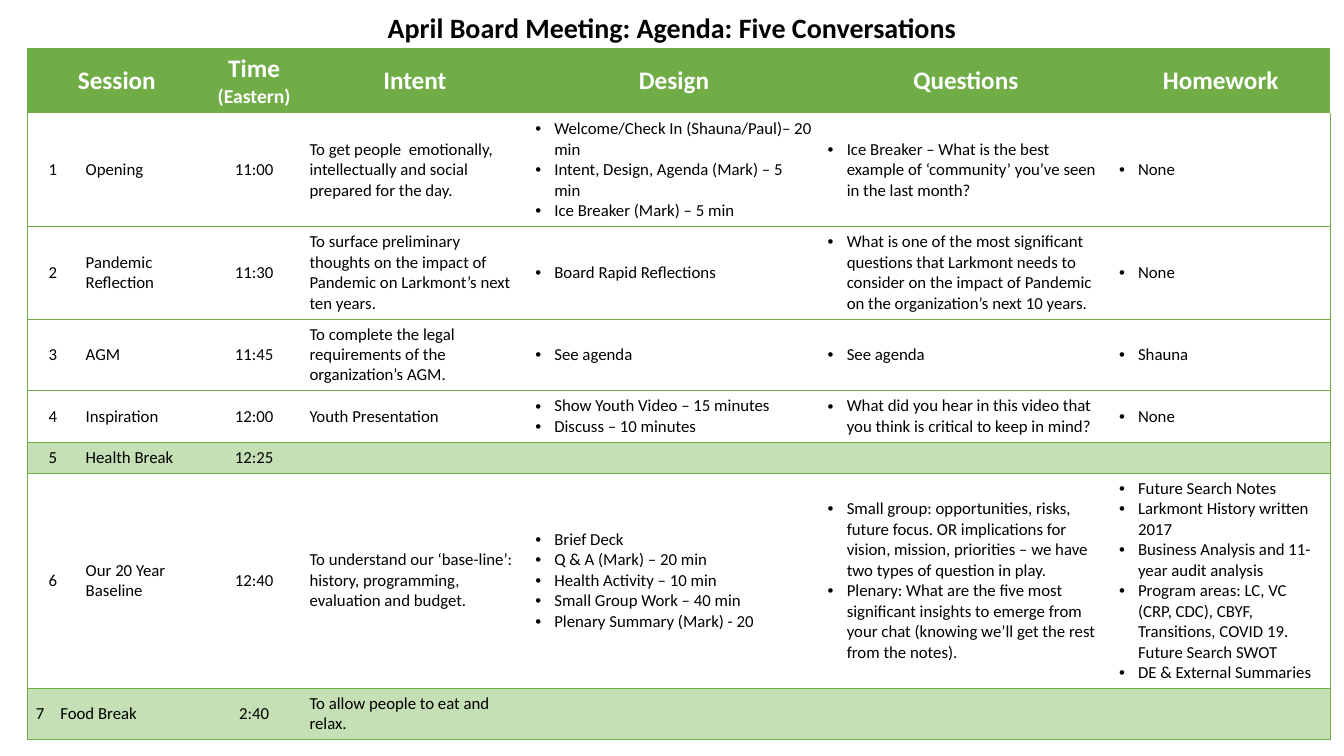
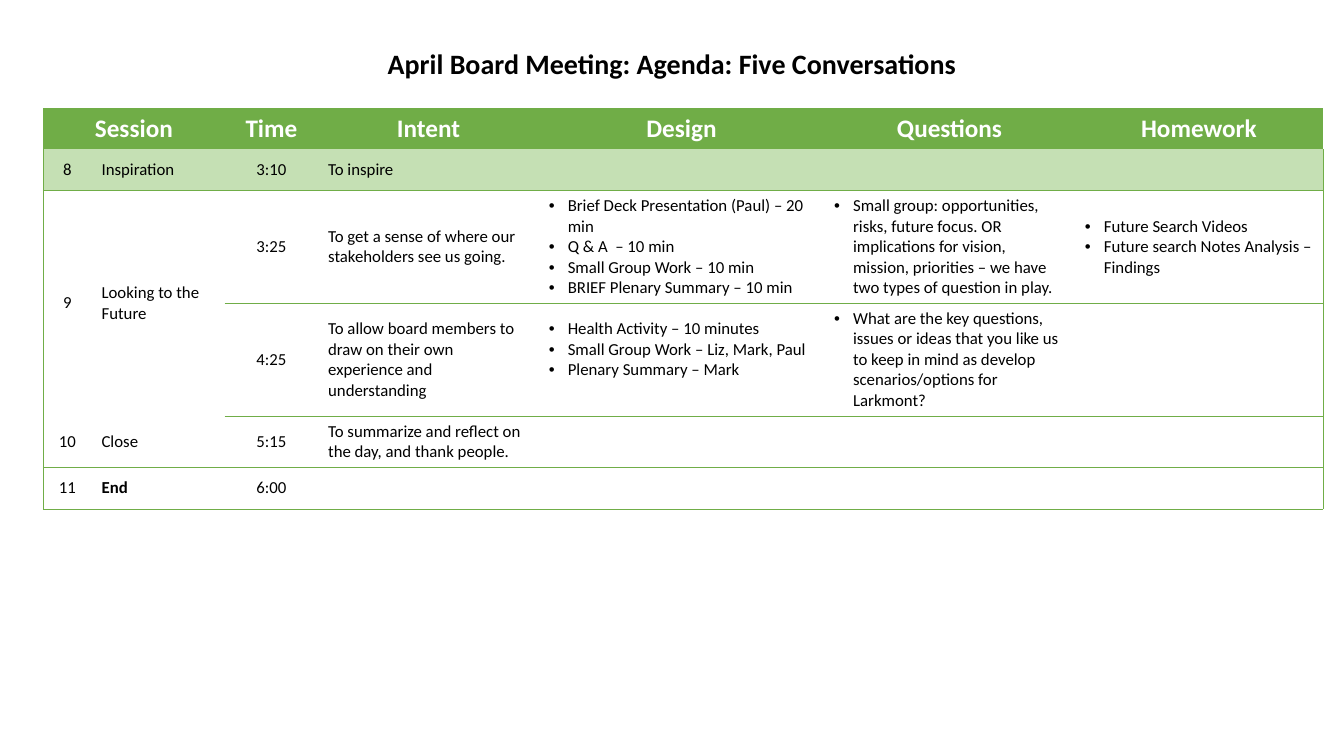
from dataclasses import dataclass

from lxml import etree
from pptx import Presentation
from pptx import util as u
from pptx.dml.color import RGBColor
from pptx.enum import text
from pptx.oxml.ns import qn

FONT = "Calibri"
BLACK, WHITE, GREEN, PALE_GREEN = "000000", "FFFFFF", "70AD47", "C5E0B4"
TITLE = "April Board Meeting: Agenda: Five Conversations"
PLAIN_TABLE_STYLE = "{2D5ABB26-0587-4C30-8999-92F81FD0307C}"
TITLE_ONLY = 5
CENTERED_FIELDS = (0, 2)
FIRST_BULLET_FIELD = 4
BULLET_INDENT = u.Cm(0.48)
CELL_PADDING = u.Cm(0.13)

Lines = tuple[str, ...]


@dataclass(frozen=True)
class Session:
    number: str
    name: str
    time: str
    intent: str = ""
    design: Lines = ()
    questions: Lines = ()
    homework: Lines = ()
    height: float = 1.04
    shaded: bool = False
    bold_name: bool = False
    continues: bool = False  # shares number and name with the row above
    design_lift: float = 0
    starts: Lines | tuple[int, ...] = ()  # overrides the agenda's field columns

    def fields(self) -> list[Lines]:
        words = [(value,) if value else () for value in
                 (self.number, self.name, self.time, self.intent)]
        return words + [self.design, self.questions, self.homework]


@dataclass(frozen=True)
class Agenda:
    title_top: float
    left: float
    top: float
    padding: float
    widths: tuple[float, ...]
    starts: tuple[int, ...]  # grid column where each field begins
    time_heading: Lines
    heading_height: float
    sessions: tuple[Session, ...]

    def headings(self) -> list[Lines]:
        return [("Session",), (), self.time_heading, ("Intent",), ("Design",),
                ("Questions",), ("Homework",)]


AGENDAS = (
    Agenda(
        0, 0.69, 1.22, 0.19,
        (0.64, 0.64, 3.23, 2.41, 5.69, 7.37, 6.45, 0.89, 5.51),
        (0, 2, 3, 4, 5, 6, 8), ("Time", "(Eastern)"), 1.64,
        (
            Session("1", "Opening", "11:00",
                    "To get people  emotionally, intellectually and social prepared for the day.",
                    ("Welcome/Check In (Shauna/Paul)– 20 min",
                     "Intent, Design, Agenda (Mark) – 5 min",
                     "Ice Breaker (Mark) – 5 min"),
                    ("Ice Breaker – What is the best example of ‘community’ you’ve seen "
                     "in the last month?",),
                    ("None",), 2.85),
            Session("2", "Pandemic Reflection", "11:30",
                    "To surface preliminary thoughts on the impact of Pandemic on "
                    "Larkmont’s next ten years.",
                    ("Board Rapid Reflections",),
                    ("What is one of the most significant questions that Larkmont needs to "
                     "consider on the impact of Pandemic on the organization’s next 10 years.",),
                    ("None",), 2.32),
            Session("3", "AGM", "11:45",
                    "To complete the legal requirements of the organization’s AGM.",
                    ("See agenda",), ("See agenda",), ("Shauna",), 1.8),
            Session("4", "Inspiration", "12:00", "Youth Presentation",
                    ("Show Youth Video – 15 minutes", "Discuss – 10 minutes"),
                    ("What did you hear in this video that you think is critical "
                     "to keep in mind?",),
                    ("None",), 1.3),
            Session("5", "Health Break", "12:25", height=0.77, shaded=True),
            Session("6", "Our 20 Year Baseline", "12:40",
                    "To understand our ‘base-line’: history, programming, evaluation and budget.",
                    ("Brief Deck", "Q & A (Mark) – 20 min", "Health Activity – 10 min",
                     "Small Group Work – 40 min", "Plenary Summary (Mark) - 20"),
                    ("Small group: opportunities, risks, future focus. OR implications for "
                     "vision, mission, priorities – we have two types of question in play.",
                     "Plenary: What are the five most significant insights to emerge from "
                     "your chat (knowing we’ll get the rest from the notes)."),
                    ("Future Search Notes", "Larkmont History written 2017",
                     "Business Analysis and 11-year audit analysis",
                     "Program areas: LC, VC (CRP, CDC), CBYF, Transitions, COVID 19. "
                     "Future Search SWOT",
                     "DE & External Summaries"), 5.42),
            Session("7", "Food Break", "2:40", "To allow people to eat and relax.",
                    height=1.3, shaded=True, starts=(0, 1, 3, 4, 5, 6, 7)),
        ),
    ),
    Agenda(
        0.91, 1.09, 2.72, 0.25,
        (1.22, 3.35, 2.36, 5.56, 7.19, 6.32, 6.25),
        (0, 1, 2, 3, 4, 5, 6), ("Time",), 1.04,
        (
            Session("8", "Inspiration", "3:10", "To inspire", shaded=True),
            Session("9", "Looking to the Future", "3:25",
                    "To get a sense of where our stakeholders see us going.",
                    ("Brief Deck Presentation (Paul) – 20 min", "Q & A  – 10 min",
                     "Small Group Work – 10 min", "BRIEF Plenary Summary – 10 min"),
                    ("Small group: opportunities, risks, future focus. OR implications for "
                     "vision, mission, priorities – we have two types of question in play.",),
                    ("Future Search Videos", "Future search Notes Analysis – Findings"), 2.84),
            Session("", "", "4:25",
                    "To allow board members to draw on their own experience and understanding",
                    ("Health Activity – 10 minutes", "Small Group Work – Liz, Mark, Paul",
                     "Plenary Summary – Mark"),
                    ("What are the key questions, issues or ideas that you like us to keep in "
                     "mind as develop scenarios/options for Larkmont?",),
                    height=2.84, continues=True, design_lift=0.52),
            Session("10", "Close", "5:15",
                    "To summarize and reflect on the day, and thank people.", height=1.3),
            Session("11", "End", "6:00", bold_name=True),
        ),
    ),
)


def color(value: str) -> RGBColor:
    return RGBColor.from_string(value)


def style_font(span, size: float, ink: str, bold: bool) -> None:
    span.font.name, span.font.size, span.font.bold = FONT, u.Pt(size), bold
    span.font.color.rgb = color(ink)


def add_borders(cell, sides: str) -> None:
    """Rule the given sides, named by letters out of L, R, T and B in that order."""
    properties = cell._tc.get_or_add_tcPr()
    for side in sides:
        line = etree.SubElement(properties, qn(f"a:ln{side}"), w=str(u.Pt(0.5)))
        fill = etree.SubElement(line, qn("a:solidFill"))
        etree.SubElement(fill, qn("a:srgbClr"), val=GREEN)


def add_bullet(para) -> None:
    properties = para._p.get_or_add_pPr()
    properties.set("marL", str(BULLET_INDENT))
    properties.set("indent", str(-BULLET_INDENT))
    etree.SubElement(properties, qn("a:buFont"), typeface="Arial")
    etree.SubElement(properties, qn("a:buChar"), char="•")


def format_cell(cell, padding: float, fill: str | None) -> None:
    cell.margin_left = cell.margin_right = u.Cm(padding)
    cell.margin_top = cell.margin_bottom = CELL_PADDING
    cell.vertical_anchor = text.MSO_ANCHOR.MIDDLE
    if fill:
        cell.fill.solid()
        cell.fill.fore_color.rgb = color(fill)
    else:
        cell.fill.background()


def write_cell(cell, lines: Lines, sizes: tuple[float, ...], ink: str, bold: bool,
               centered: bool, bulleted: bool) -> None:
    """Fill a cell; the last size holds for all further lines."""
    frame = cell.text_frame
    frame.text = "\n".join(lines)
    for index, para in enumerate(frame.paragraphs):
        size = sizes[min(index, len(sizes) - 1)]
        para.alignment = text.PP_ALIGN.CENTER if centered else text.PP_ALIGN.LEFT
        if not para.runs:
            etree.SubElement(para._p, qn("a:endParaRPr"), sz=str(int(size * 100)))
            continue
        if bulleted:
            add_bullet(para)
        for span in para.runs:
            style_font(span, size, ink, bold)


def field_ranges(starts: tuple[int, ...], count: int) -> list[range]:
    return [range(first, end) for first, end in zip(starts, starts[1:] + (count,))]


def draw_heading(table, agenda: Agenda) -> None:
    ranges = field_ranges(agenda.starts, len(agenda.widths))
    for cell in table.rows[0].cells:
        add_borders(cell, "LT" if cell is table.cell(0, 0) else "T")
        format_cell(cell, agenda.padding, GREEN)
    for field, (lines, columns) in enumerate(zip(agenda.headings(), ranges)):
        write_cell(table.cell(0, columns[0]), lines, (18, 14), WHITE, True, True, False)
        if field > 1 and len(columns) > 1:
            table.cell(0, columns[0]).merge(table.cell(0, columns[-1]))
    table.cell(0, 0).merge(table.cell(0, ranges[1][-1]))


def draw_session(table, agenda: Agenda, row: int, session: Session) -> None:
    ranges = field_ranges(session.starts or agenda.starts, len(agenda.widths))
    continued = row < len(agenda.sessions) and agenda.sessions[row].continues
    for field, (lines, columns) in enumerate(zip(session.fields(), ranges)):
        joined = field < 2 and (session.continues or continued)
        for column in columns:
            cell = table.cell(row, column)
            sides = "L" if column == 0 else ""
            sides += "R" if field == len(ranges) - 1 else ""
            add_borders(cell, sides + ("" if joined else "B"))
            format_cell(cell, agenda.padding, PALE_GREEN if session.shaded else None)
            write_cell(cell, lines if column == columns[0] else (), (12,), BLACK,
                       session.bold_name and field == 1,
                       field in CENTERED_FIELDS, field >= FIRST_BULLET_FIELD)
        if field == FIRST_BULLET_FIELD:
            table.cell(row, columns[0]).margin_bottom = CELL_PADDING + u.Cm(session.design_lift)
        if len(columns) > 1:
            table.cell(row, columns[0]).merge(table.cell(row, columns[-1]))
        if field < 2 and session.continues:
            table.cell(row - 1, columns[0]).merge(table.cell(row, columns[0]))


def draw_title(page, top: float) -> None:
    title = page.shapes.title
    title.left, title.top = u.Cm(2.33), u.Cm(top)
    title.width, title.height = u.Cm(29.21), u.Cm(1.5)
    frame = title.text_frame
    frame.text = TITLE
    frame.word_wrap = True
    frame.auto_size = text.MSO_AUTO_SIZE.NONE
    frame.vertical_anchor = text.MSO_ANCHOR.MIDDLE
    para = frame.paragraphs[0]
    para.alignment, para.line_spacing = text.PP_ALIGN.CENTER, 0.9
    style_font(para.runs[0], 20, BLACK, True)


def draw_agenda(page, agenda: Agenda) -> None:
    heights = [agenda.heading_height] + [session.height for session in agenda.sessions]
    frame = page.shapes.add_table(
        len(heights), len(agenda.widths), u.Cm(agenda.left), u.Cm(agenda.top),
        u.Cm(sum(agenda.widths)), u.Cm(sum(heights)))
    table = frame.table
    table.horz_banding = False
    for style in frame.element.iter(qn("a:tableStyleId")):
        style.text = PLAIN_TABLE_STYLE
    for column, width in zip(table.columns, agenda.widths):
        column.width = u.Cm(width)
    for row, height in zip(table.rows, heights):
        row.height = u.Cm(height)
    draw_heading(table, agenda)
    for number, session in enumerate(agenda.sessions, start=1):
        draw_session(table, agenda, number, session)


def main() -> None:
    deck = Presentation()
    deck.slide_width, deck.slide_height = u.Cm(33.87), u.Cm(19.05)
    for agenda in AGENDAS:
        page = deck.slides.add_slide(deck.slide_layouts[TITLE_ONLY])
        draw_title(page, agenda.title_top)
        draw_agenda(page, agenda)
    deck.save("out.pptx")


if __name__ == "__main__":
    main()
